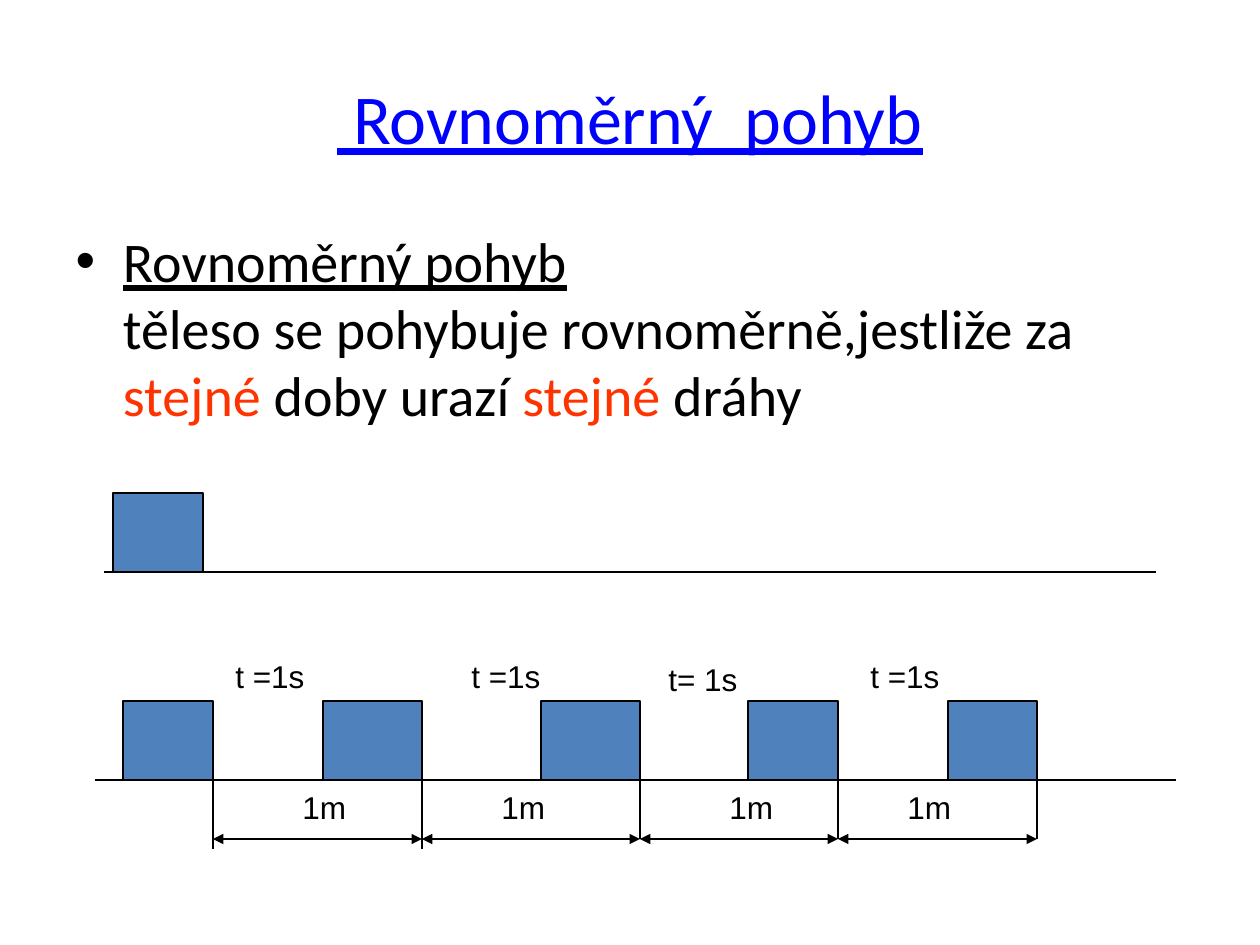
from itertools import pairwise

from lxml.etree import SubElement
from pptx import Presentation
from pptx.dml.color import RGBColor
from pptx.enum.shapes import MSO_CONNECTOR, MSO_SHAPE
from pptx.enum.text import MSO_ANCHOR, PP_ALIGN
from pptx.oxml.ns import qn
from pptx.util import Emu, Pt

PX_PER_INCH = 126
BLACK, BLUE, RED, BLOCK_FILL = "000000", "0000FF", "FF3300", "4F81BD"
BLOCK_HEIGHT = 79
START_BASELINE, MOTION_BASELINE, ARROW_LEVEL = 572, 780, 839


def px(length):
    """Turn pixels into EMU."""
    return Emu(round(length * 914400 / PX_PER_INCH))


def set_color(color_format, value):
    """Apply a hex colour to a fill or font colour."""
    color_format.rgb = RGBColor.from_string(value)


def place(shape, left, top, width, height):
    """Move and size a shape in pixels."""
    shape.left, shape.top = px(left), px(top)
    shape.width, shape.height = px(width), px(height)


def set_font(font, name, size, color):
    """Format a font."""
    font.name, font.size = name, Pt(size)
    set_color(font.color, color)


def set_outline(line):
    """Give a shape or connector a thin black line."""
    set_color(line.color, BLACK)
    line.width = Pt(0.75)


def fill_title(title):
    """Write the underlined slide title."""
    place(title, 63, 38, 1134, 157)
    title.text_frame.vertical_anchor = MSO_ANCHOR.MIDDLE
    para = title.text_frame.paragraphs[0]
    para.text = " Rovnoměrný  pohyb"
    para.alignment = PP_ALIGN.CENTER
    set_font(para.font, "Calibri", 40, BLUE)
    para.font.underline = True


def fill_definition(body):
    """Write the definition with its heading and red key words."""
    place(body, 63, 220, 1134, 624)
    para = body.text_frame.paragraphs[0]
    set_font(para.font, "Calibri", 32, BLACK)
    heading = para.add_run()
    heading.text = "Rovnoměrný pohyb"
    heading.font.underline = True
    para.add_line_break()
    for text, color in (
        ("těleso se pohybuje rovnoměrně,jestliže za ", BLACK),
        ("stejné", RED),
        (" doby urazí ", BLACK),
        ("stejné", RED),
        (" dráhy", BLACK),
    ):
        span = para.add_run()
        span.text = text
        set_color(span.font.color, color)


def add_block(page, left, right, baseline):
    """Stand a moving block on a baseline."""
    block = page.shapes.add_shape(
        MSO_SHAPE.RECTANGLE, px(left), px(baseline - BLOCK_HEIGHT),
        px(right - left), px(BLOCK_HEIGHT))
    block.shadow.inherit = False
    block.fill.solid()
    set_color(block.fill.fore_color, BLOCK_FILL)
    set_outline(block.line)


def add_line(page, start, end, arrows=False):
    """Draw a straight line, with arrowheads at both ends if wanted."""
    line = page.shapes.add_connector(
        MSO_CONNECTOR.STRAIGHT, *map(px, start), *map(px, end))
    set_outline(line.line)
    properties = line._element.spPr
    SubElement(properties, qn("a:effectLst"))
    if arrows:
        for tag in ("a:headEnd", "a:tailEnd"):
            SubElement(properties.find(qn("a:ln")), qn(tag), type="triangle")


def add_label(page, text, left, top, width):
    """Write a time or distance label."""
    box = page.shapes.add_textbox(px(left), px(top), px(width), px(50))
    box.text_frame.word_wrap = False
    para = box.text_frame.paragraphs[0]
    para.text = text
    set_font(para.font, "Arial", 18, BLACK)


def add_motion(page):
    """Draw the block positions with equal times and distances."""
    blocks = ((123, 213), (323, 422), (541, 640), (748, 838), (948, 1037))
    add_line(page, (95, MOTION_BASELINE), (1176, MOTION_BASELINE))
    for left, right in blocks:
        add_block(page, left, right, MOTION_BASELINE)
    edges = [right for _, right in blocks]
    for edge, bottom in zip(edges, (849, 849) + (ARROW_LEVEL,) * 3):
        add_line(page, (edge, MOTION_BASELINE), (edge, bottom))
    for start, end in pairwise(edges):
        add_line(page, (start, ARROW_LEVEL), (end, ARROW_LEVEL), arrows=True)
    for text, left, top in (
        ("t =1s", 223, 651), ("t =1s", 459, 651),
        ("t= 1s", 656, 654), ("t =1s", 858, 651),
    ):
        add_label(page, text, left, top, 95)
    for left in (290, 489, 717, 895):
        add_label(page, "1m", left, 782, 69)


def main():
    """Build and save the slide."""
    deck = Presentation()
    deck.slide_width, deck.slide_height = px(1260), px(945)
    page = deck.slides.add_slide(deck.slide_layouts[1])
    fill_title(page.shapes.title)
    fill_definition(page.placeholders[1])
    add_motion(page)
    add_block(page, 113, 203, START_BASELINE)
    add_line(page, (104, START_BASELINE), (1156, START_BASELINE))
    deck.save("out.pptx")


if __name__ == "__main__":
    main()
